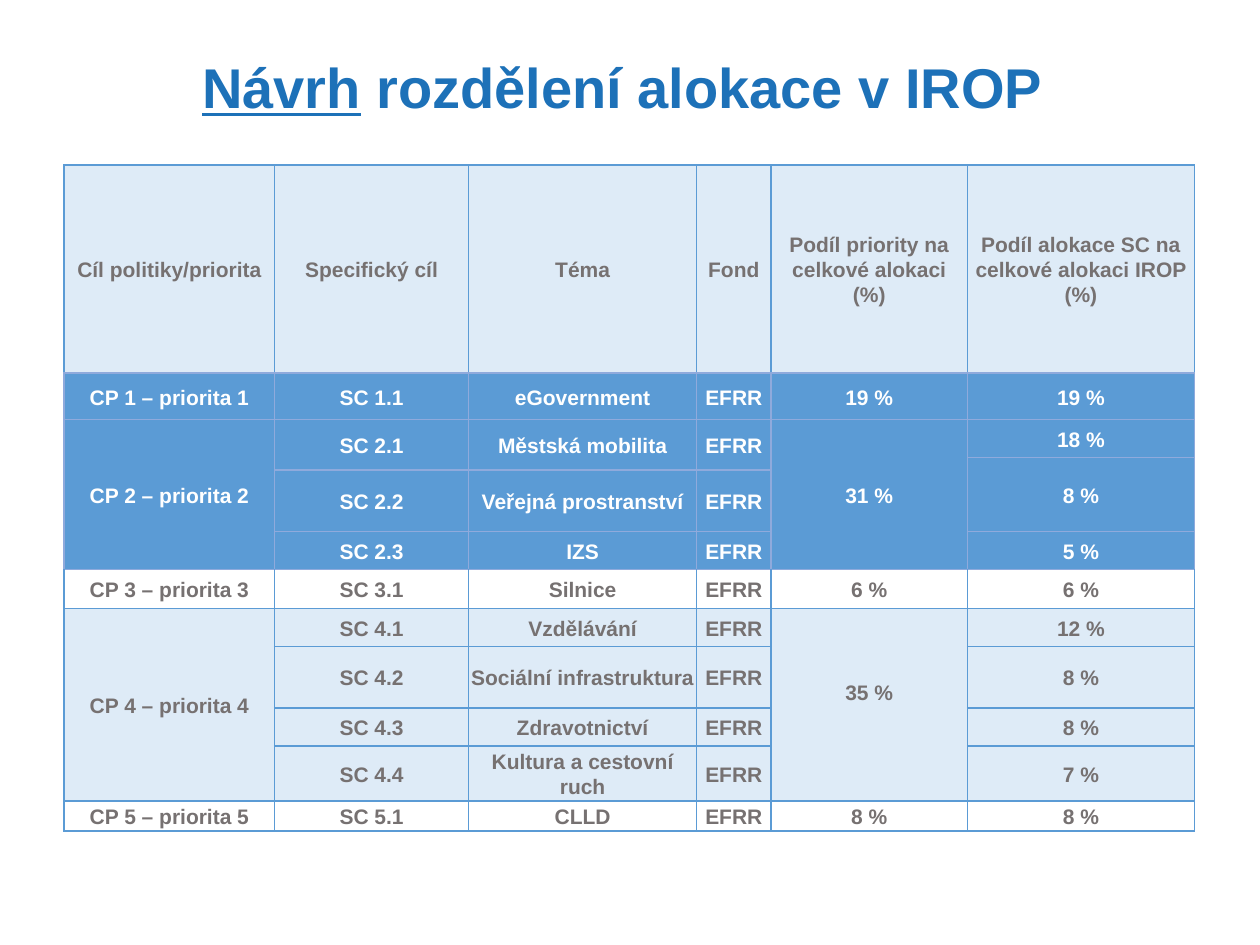
from dataclasses import dataclass

from lxml.etree import SubElement
from pptx import Presentation
from pptx.dml.color import RGBColor
from pptx.enum.text import MSO_ANCHOR, PP_ALIGN
from pptx.oxml.ns import qn
from pptx.table import Table
from pptx.util import Inches, Pt

COLORS = {
    "title": "1D71B8",
    "grey": "767171",
    "white": "FFFFFF",
    "pale": "DEEBF7",
    "blue": "5B9BD5",
    "lavender": "8FAADC",
}
COL_WIDTHS = [1.67, 1.54, 1.81, 0.59, 1.56, 1.8]
ROW_HEIGHTS = [1.65, 0.37, 0.3, 0.1, 0.49, 0.3, 0.31, 0.3, 0.49, 0.3, 0.41, 0.24]
HEADERS = [
    "Cíl politiky/priorita",
    "Specifický cíl",
    "Téma",
    "Fond",
    "Podíl priority na celkové alokaci\n(%)",
    "Podíl alokace SC na celkové alokaci IROP (%)",
]


@dataclass
class Style:
    fill: str
    text: str
    top: str = "blue"
    side: str = "blue"
    bottom: str = "blue"


@dataclass
class Goal:
    code: str
    theme: str
    share: str
    rows: int = 1
    share_rows: int = 1


@dataclass
class Priority:
    number: int
    share: str
    style: Style
    goals: list[Goal]
    lift: float = 0.0


HEADER = Style("pale", "grey", bottom="lavender")
STRONG = Style("blue", "white", "lavender", "lavender", "lavender")
PALE = Style("pale", "grey")
PRIORITIES = [
    Priority(1, "19 %", STRONG, [Goal("SC 1.1", "eGovernment", "19 %")]),
    Priority(2, "31 %", STRONG, [
        Goal("SC 2.1", "Městská mobilita", "18 %", rows=2),
        Goal("SC 2.2", "Veřejná prostranství", "8 %", share_rows=2),
        Goal("SC 2.3", "IZS", "5 %"),
    ]),
    Priority(3, "6 %", Style("white", "grey", top="lavender"),
             [Goal("SC 3.1", "Silnice", "6 %")]),
    Priority(4, "35 %", PALE, [
        Goal("SC 4.1", "Vzdělávání", "12 %"),
        Goal("SC 4.2", "Sociální infrastruktura", "8 %"),
        Goal("SC 4.3", "Zdravotnictví", "8 %"),
        Goal("SC 4.4", "Kultura a cestovní ruch", "7 %"),
    ], lift=0.2),
    Priority(5, "8 %", Style("white", "grey"), [Goal("SC 5.1", "CLLD", "8 %")]),
]


def rgb(name: str) -> RGBColor:
    return RGBColor.from_string(COLORS[name])


def add_run(p, text: str, size: float, color: str, underline: bool = False) -> None:
    r = p.add_run()
    r.text = text
    r.font.name = "Arial"
    r.font.size = Pt(size)
    r.font.bold = True
    r.font.underline = underline
    r.font.color.rgb = rgb(color)


def set_borders(cell, style: Style) -> None:
    tc_pr = cell._tc.get_or_add_tcPr()
    sides = {"lnL": style.side, "lnR": style.side, "lnT": style.top, "lnB": style.bottom}
    for tag, color in sides.items():
        ln = SubElement(tc_pr, qn(f"a:{tag}"), w=str(Pt(1)))
        SubElement(SubElement(ln, qn("a:solidFill")), qn("a:srgbClr"), val=COLORS[color])


def put_cell(table: Table, row: int, col: int, text: str, style: Style,
             span: int = 1, lift: float = 0.0) -> None:
    """Fill one cell, merged over span rows; lift is its bottom margin in inches."""
    cell = table.cell(row, col)
    if span > 1:
        cell.merge(table.cell(row + span - 1, col))
    set_borders(cell, style)
    cell.fill.solid()
    cell.fill.fore_color.rgb = rgb(style.fill)
    cell.vertical_anchor = MSO_ANCHOR.MIDDLE
    cell.margin_left = cell.margin_right = cell.margin_top = Inches(0.01)
    cell.margin_bottom = Inches(lift)
    tf = cell.text_frame
    for i, line in enumerate(text.split("\n")):
        p = tf.add_paragraph() if i else tf.paragraphs[0]
        p.alignment = PP_ALIGN.CENTER
        p.line_spacing = 1.07
        add_run(p, line, 12, style.text)


def put_priority(table: Table, row: int, priority: Priority) -> int:
    """Fill the rows of one priority and return the row after it."""
    style = priority.style
    goal_row = share_row = row
    for goal in priority.goals:
        for col, text in enumerate([goal.code, goal.theme, "EFRR"], start=1):
            put_cell(table, goal_row, col, text, style, goal.rows)
        put_cell(table, share_row, 5, goal.share, style, goal.share_rows)
        goal_row += goal.rows
        share_row += goal.share_rows
    span = goal_row - row
    name = f"CP {priority.number} – priorita {priority.number}"
    put_cell(table, row, 0, name, style, span)
    put_cell(table, row, 4, priority.share, style, span, priority.lift)
    return goal_row


def add_title(s) -> None:
    tf = s.shapes.add_textbox(Inches(0.69), Inches(0.25), Inches(8.62), Inches(0.93)).text_frame
    tf.word_wrap = True
    tf.vertical_anchor = MSO_ANCHOR.MIDDLE
    p = tf.paragraphs[0]
    p.alignment = PP_ALIGN.CENTER
    p.line_spacing = 0.9
    add_run(p, "Návrh", 32, "title", underline=True)
    add_run(p, " rozdělení alokace v IROP ", 32, "title")


def add_allocation_table(s) -> None:
    table = s.shapes.add_table(
        len(ROW_HEIGHTS), len(COL_WIDTHS), Inches(0.51), Inches(1.31),
        Inches(sum(COL_WIDTHS)), Inches(sum(ROW_HEIGHTS))).table
    table.first_row = table.horz_banding = False
    for column, width in zip(table.columns, COL_WIDTHS):
        column.width = Inches(width)
    for table_row, height in zip(table.rows, ROW_HEIGHTS):
        table_row.height = Inches(height)
    for col, text in enumerate(HEADERS):
        put_cell(table, 0, col, text, HEADER)
    row = 1
    for priority in PRIORITIES:
        row = put_priority(table, row, priority)


def main() -> None:
    prs = Presentation()
    prs.slide_width, prs.slide_height = Inches(10), Inches(7.5)
    s = prs.slides.add_slide(prs.slide_layouts[6])
    add_title(s)
    add_allocation_table(s)
    prs.save("out.pptx")


if __name__ == "__main__":
    main()
